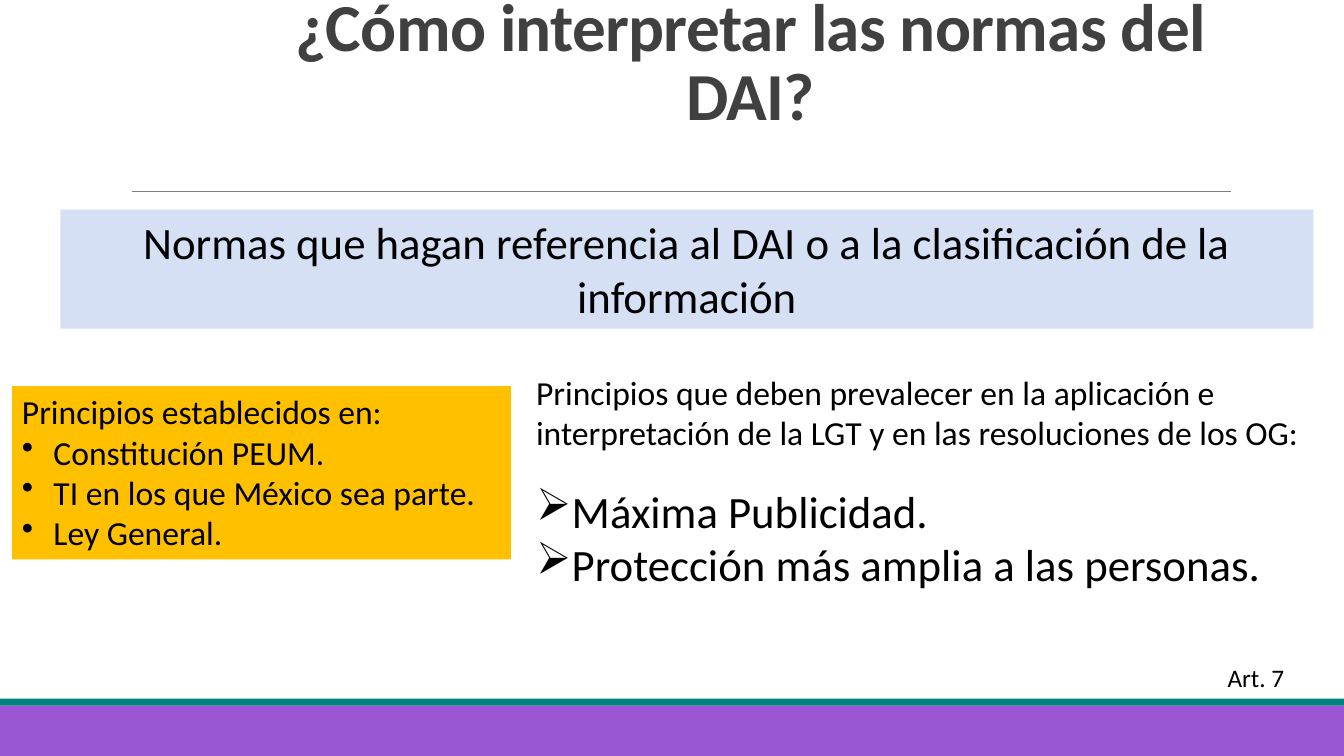
"""Build the slide on how to interpret the rules of the DAI."""
from lxml import etree
from pptx import Presentation
from pptx.dml.color import RGBColor
from pptx.enum.shapes import MSO_CONNECTOR, MSO_SHAPE
from pptx.enum.text import MSO_ANCHOR, MSO_AUTO_SIZE, PP_ALIGN
from pptx.oxml.ns import qn
from pptx.util import Pt

STRAIGHT = MSO_CONNECTOR.STRAIGHT
RECTANGLE = MSO_SHAPE.RECTANGLE
BOTTOM = MSO_ANCHOR.BOTTOM
GROW = MSO_AUTO_SIZE.SHAPE_TO_FIT_TEXT
CENTER = PP_ALIGN.CENTER

PURPLE = RGBColor(0x9B, 0x57, 0xD3)
TEAL = RGBColor(0x00, 0x80, 0x80)
GRAY = RGBColor(0x80, 0x80, 0x80)
DARK = RGBColor(0x40, 0x40, 0x40)
BLUE = RGBColor(0x9B, 0xB4, 0xE9)
AMBER = RGBColor(0xFF, 0xC0, 0x00)
BLACK = RGBColor(0x00, 0x00, 0x00)

FONT = "Calibri"
WIDTH, HEIGHT = 960, 540
INDENT = Pt(22.5)


def add_box(slide, box):
    text_box = slide.shapes.add_textbox(*map(Pt, box))
    text_box.text_frame.word_wrap = True
    text_box.text_frame.auto_size = GROW
    return text_box


def write(paragraph, text, size, color=BLACK, bullet=None):
    paragraph.text = text
    if bullet:
        properties = paragraph._p.get_or_add_pPr()
        properties.set("marL", str(INDENT))
        properties.set("indent", str(-INDENT))
        etree.SubElement(properties, qn("a:buChar")).set("char", bullet)
    paragraph.font.name = FONT
    paragraph.font.size = Pt(size)
    paragraph.font.color.rgb = color


def add_bullets(frame, items, size, bullet, gap=0):
    for index, item in enumerate(items):
        paragraph = frame.add_paragraph()
        write(paragraph, item, size, bullet=bullet)
        if gap and index == 0:
            paragraph.space_before = Pt(gap)


def add_footer(slide, left, top, width, height):
    stripe = 5
    bands = ((top + stripe, height - stripe, PURPLE), (top, stripe, TEAL))
    for band_top, band_height, color in bands:
        band = slide.shapes.add_shape(
            RECTANGLE, Pt(left), Pt(band_top), Pt(width), Pt(band_height))
        band.shadow.inherit = False
        band.fill.solid()
        band.fill.fore_color.rgb = color
        band.line.fill.background()


def add_rule(slide, left, top, width):
    rule = slide.shapes.add_connector(
        STRAIGHT, Pt(left), Pt(top), Pt(left + width), Pt(top))
    rule.line.color.rgb = GRAY
    rule.line.width = Pt(0.5)
    etree.SubElement(rule._element.spPr, qn("a:effectLst"))


def add_title(slide, box):
    frame = add_box(slide, box).text_frame
    frame.auto_size = MSO_AUTO_SIZE.NONE
    frame.vertical_anchor = BOTTOM
    title = frame.paragraphs[0]
    write(title, "¿Cómo interpretar las normas del DAI?", 48, DARK)
    title.font.bold = True
    title.alignment = CENTER
    title.line_spacing = 0.85
    title.runs[0]._r.get_or_add_rPr().set("spc", "-50")


def add_scope(slide, box):
    scope = add_box(slide, box)
    scope.fill.solid()
    scope.fill.fore_color.rgb = BLUE
    tint = scope._element.spPr.find(".//" + qn("a:srgbClr"))
    etree.SubElement(tint, qn("a:alpha")).set("val", "41000")
    statement = scope.text_frame.paragraphs[0]
    write(statement, "Normas que hagan referencia al DAI o a la clasificación "
          "de la información", 32)
    statement.alignment = CENTER


def add_sources(slide, box):
    sources = add_box(slide, box)
    sources.fill.solid()
    sources.fill.fore_color.rgb = AMBER
    frame = sources.text_frame
    write(frame.paragraphs[0], "Principios establecidos en:", 24)
    add_bullets(frame, ("Constitución PEUM.", "TI en los que México sea parte.",
                        "Ley General."), 24, "•")


def add_principles(slide, box):
    frame = add_box(slide, box).text_frame
    write(frame.paragraphs[0], "Principios que deben prevalecer en la aplicación e "
          "interpretación de la LGT y en las resoluciones de los OG:", 24)
    add_bullets(frame, ("Máxima Publicidad.",
                        "Protección más amplia a las personas."), 32, "➢", gap=22)


def add_article(slide, box):
    write(add_box(slide, box).text_frame.paragraphs[0], "Art. 7", 18)


def main():
    presentation = Presentation()
    presentation.slide_width, presentation.slide_height = Pt(WIDTH), Pt(HEIGHT)
    slide = presentation.slides.add_slide(presentation.slide_layouts[6])
    add_footer(slide, 0, 499, WIDTH, HEIGHT - 499)
    add_rule(slide, 94.3, 136.8, 784.8)
    add_title(slide, (170.6, 35.3, 730.8, 64))
    add_scope(slide, (43.2, 149.8, 895, 85))
    add_sources(slide, (8.6, 275.8, 356.4, 123.8))
    add_principles(slide, (375.8, 262, 563, 169.2))
    add_article(slide, (869.8, 469.4, 76.3, 28.8))
    presentation.save("out.pptx")


if __name__ == "__main__":
    main()
